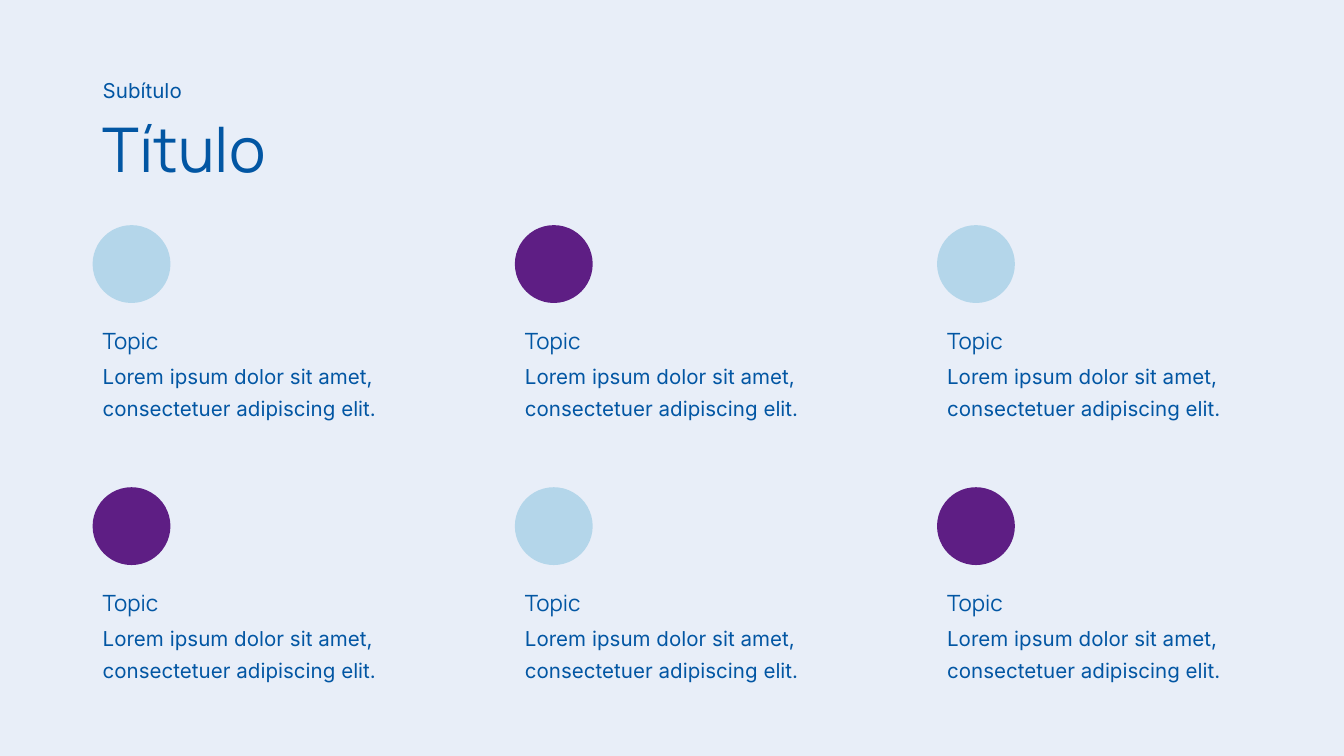
from pptx import Presentation
from pptx.dml.color import RGBColor
from pptx.enum.shapes import MSO_SHAPE
from pptx.enum.text import MSO_ANCHOR, MSO_AUTO_SIZE, PP_ALIGN
from pptx.util import Pt

COLORS = {
    "background": "E8EEF8",
    "text": "0256A3",
    "light": "B4D6EA",
    "dark": "5E1E84",
}
HEADING_FONT = "Manrope"
BODY_FONT = "Inter"
LEFT = 49.6
GRID_TOP = 120.6
COLUMN_STEP = 226.2
ROW_STEP = 140.4
COLUMNS = 3
ROWS = 2
CIRCLE_SIZE = 41.7
TOPIC_WIDTH = 168.5
TOPIC = "Topic"
DESCRIPTION = "Lorem ipsum dolor sit amet, consectetuer adipiscing elit."


def set_fill(fill, color):
    fill.solid()
    fill.fore_color.rgb = RGBColor.from_string(COLORS[color])


def place(box, left, top, width, height):
    box.left, box.top = Pt(left), Pt(top)
    box.width, box.height = Pt(width), Pt(height)


def write_text(box, text, font, size, line_spacing=1.0):
    frame = box.text_frame
    frame.text = text
    frame.word_wrap = True
    frame.auto_size = MSO_AUTO_SIZE.SHAPE_TO_FIT_TEXT
    frame.vertical_anchor = MSO_ANCHOR.TOP
    frame.margin_left = frame.margin_right = Pt(5.4)
    frame.margin_top = frame.margin_bottom = Pt(2.7)
    para = frame.paragraphs[0]
    para.alignment = PP_ALIGN.LEFT
    para.line_spacing = line_spacing
    span = para.runs[0]
    span.font.name = font
    span.font.size = Pt(size)
    span.font.color.rgb = RGBColor.from_string(COLORS["text"])


def add_title(page, text):
    title = page.shapes.title
    place(title, LEFT, 56.9, 531.4, 45.4)
    write_text(title, text, HEADING_FONT, 33)


def add_text(page, text, left, top, width, height, font, size, line_spacing=1.0):
    box = page.shapes.add_textbox(Pt(left), Pt(top), Pt(width), Pt(height))
    write_text(box, text, font, size, line_spacing)


def add_circle(page, left, top, color):
    circle = page.shapes.add_shape(
        MSO_SHAPE.OVAL, Pt(left), Pt(top), Pt(CIRCLE_SIZE), Pt(CIRCLE_SIZE)
    )
    circle.shadow.inherit = False
    set_fill(circle.fill, color)
    circle.line.fill.background()


def add_topic(page, left, top, color):
    add_text(page, DESCRIPTION, left, top + 67.9, TOPIC_WIDTH, 36, BODY_FONT, 11, 1.3)
    add_text(page, TOPIC, left, top + 47.7, TOPIC_WIDTH, 24.5, HEADING_FONT, 12, 1.3)
    add_circle(page, left, top, color)


def main():
    deck = Presentation()
    deck.slide_width, deck.slide_height = Pt(720), Pt(405)
    page = deck.slides.add_slide(deck.slide_layouts[5])
    set_fill(page.background.fill, "background")
    add_title(page, "Título")
    add_text(page, "Subítulo", LEFT, 38.9, 133.2, 18.7, BODY_FONT, 11)
    for row in range(ROWS):
        for column in range(COLUMNS):
            color = "dark" if (row + column) % 2 else "light"
            add_topic(page, LEFT + column * COLUMN_STEP, GRID_TOP + row * ROW_STEP, color)
    deck.save("out.pptx")


if __name__ == "__main__":
    main()
